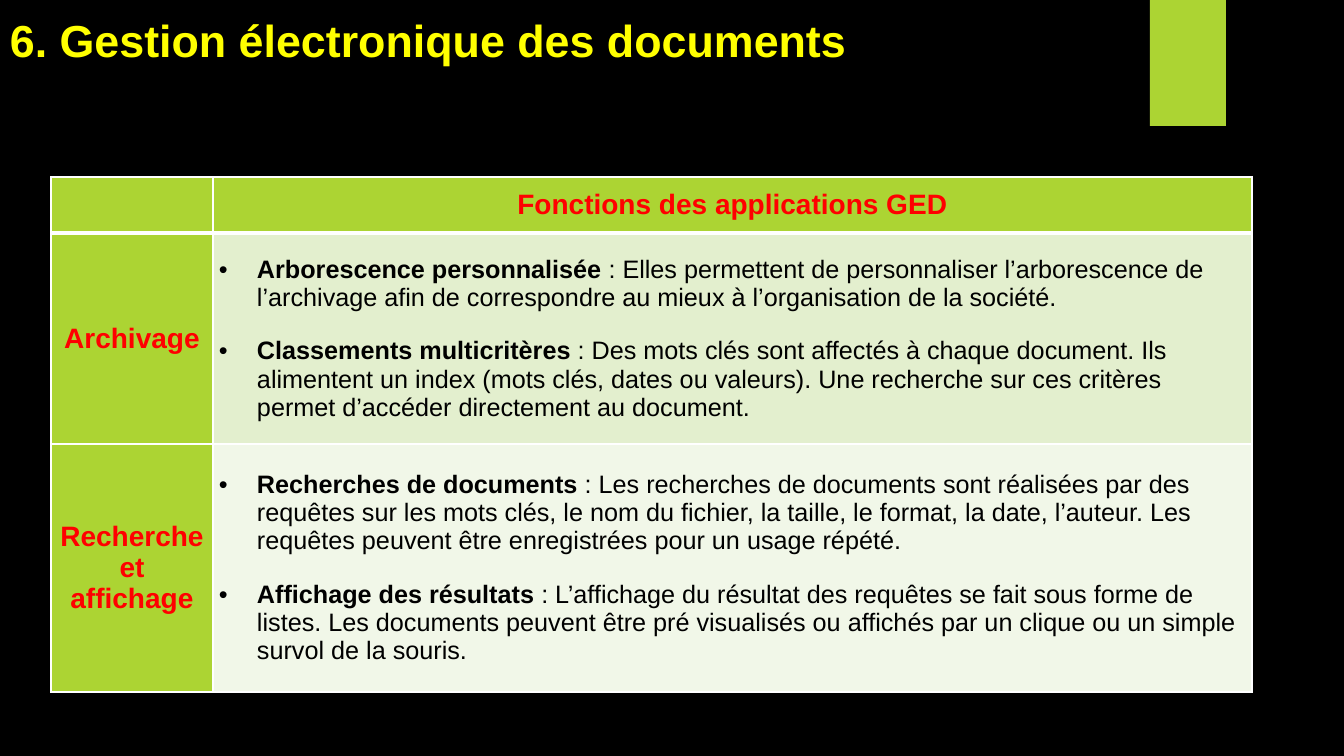
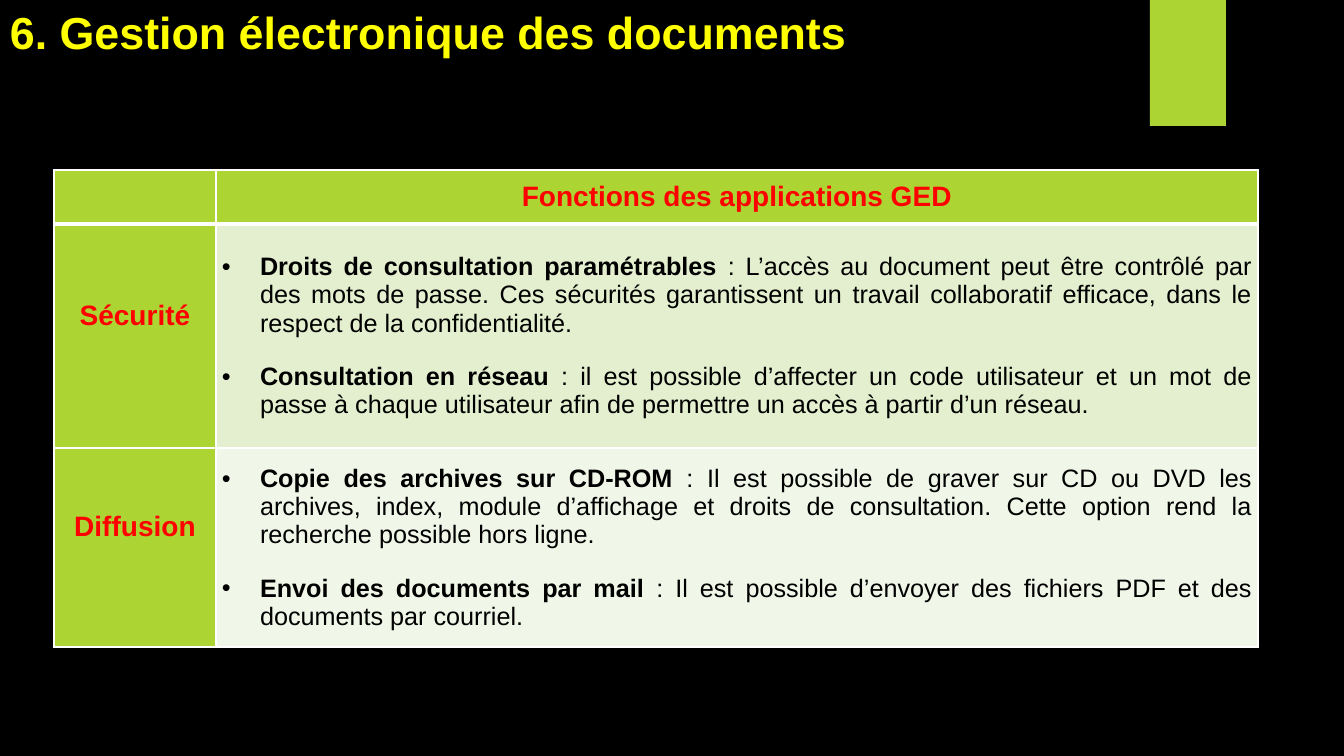
from pptx import Presentation
from pptx.dml.color import RGBColor
from pptx.enum.shapes import MSO_SHAPE
from pptx.enum.text import MSO_ANCHOR, PP_ALIGN
from pptx.oxml import parse_xml
from pptx.oxml.ns import nsdecls
from pptx.util import Pt

EMU_PER_PX = 914400 / 100.8
FONT = "Arial"
COLORS = {
    "background": "000000",
    "accent": "ACD433",
    "title": "FFFF00",
    "label": "FF0000",
    "body": "000000",
    "border": "FFFFFF",
    "first_band": "E3EFCE",
    "second_band": "F1F7E8",
}
TITLE = "6. Gestion électronique des documents"
TABLE_HEADING = "Fonctions des applications GED"
LABEL_WIDTH = 162

SLIDES = [
    {
        "title_top": 8,
        "table_corner": (51, 177),
        "text_width": 1039,
        "row_heights": (56, 211, 248),
        "align": PP_ALIGN.LEFT,
        "label_lift": 0,
        "rows": [
            ("Archivage", [
                ("Arborescence personnalisée",
                 " : Elles permettent de personnaliser l’arborescence de l’archivage "
                 "afin de correspondre au mieux à l’organisation de la société."),
                ("Classements multicritères",
                 " : Des mots clés sont affectés à chaque document. Ils alimentent un index "
                 "(mots clés, dates ou valeurs). Une recherche sur ces critères permet "
                 "d’accéder directement au document."),
            ]),
            ("Recherche et affichage", [
                ("Recherches de documents ",
                 ": Les recherches de documents sont réalisées par des requêtes sur les mots "
                 "clés, le nom du fichier, la taille, le format, la date, l’auteur. Les "
                 "requêtes peuvent être enregistrées pour un usage répété."),
                ("Affichage des résultats",
                 " : L’affichage du résultat des requêtes se fait sous forme de listes. Les "
                 "documents peuvent être pré visualisés ou affichés par un clique ou un "
                 "simple survol de la souris."),
            ]),
        ],
    },
    {
        "title_top": 0,
        "table_corner": (54, 170),
        "text_width": 1042,
        "row_heights": (54, 224, 199),
        "align": PP_ALIGN.JUSTIFY,
        "label_lift": 41,
        "rows": [
            ("Sécurité", [
                ("Droits de consultation paramétrables",
                 " : L’accès au document peut être contrôlé par des mots de passe. Ces "
                 "sécurités garantissent un travail collaboratif efficace, dans le respect "
                 "de la confidentialité."),
                ("Consultation en réseau",
                 " : il est possible d’affecter un code utilisateur et un mot de passe à "
                 "chaque utilisateur afin de permettre un accès à partir d’un réseau."),
            ]),
            ("Diffusion", [
                ("Copie des archives sur CD-ROM ",
                 ": Il est possible de graver sur CD ou DVD les archives, index, module "
                 "d’affichage et droits de consultation. Cette option rend la recherche "
                 "possible hors ligne."),
                ("Envoi des documents par mail ",
                 ": Il est possible d’envoyer des fichiers PDF et des documents par courriel."),
            ]),
        ],
    },
]


def px(length):
    return round(length * EMU_PER_PX)


def color(name):
    return RGBColor.from_string(COLORS[name])


class Deck:
    def __init__(self):
        self.presentation = Presentation()
        self.presentation.slide_width = px(1344)
        self.presentation.slide_height = px(756)
        self.slide = None

    def add_slide(self):
        self.slide = self.presentation.slides.add_slide(self.presentation.slide_layouts[6])
        background = self.slide.background.fill
        background.solid()
        background.fore_color.rgb = color("background")
        self.add_band()

    def add_band(self):
        band = self.slide.shapes.add_shape(
            MSO_SHAPE.RECTANGLE, px(1150), 0, px(76), px(126))
        band.shadow.inherit = False
        band.fill.solid()
        band.fill.fore_color.rgb = color("accent")
        band.line.fill.background()

    def format_run(self, run, size, color_name, bold=True):
        run.font.name = FONT
        run.font.size = Pt(size)
        run.font.bold = bold
        run.font.color.rgb = color(color_name)

    def add_title(self, text, top):
        box = self.slide.shapes.add_textbox(0, px(top), px(863), px(64))
        box.text_frame.word_wrap = True
        box.text_frame.text = text
        self.format_run(box.text_frame.paragraphs[0].runs[0], 32, "title")

    def style_cell(self, cell, fill_name, top=1, bottom=1, lift=0):
        cell.fill.solid()
        cell.fill.fore_color.rgb = color(fill_name)
        cell.vertical_anchor = MSO_ANCHOR.MIDDLE
        cell.margin_left = cell.margin_right = px(6)
        cell.margin_top = 0
        cell.margin_bottom = px(lift)
        properties = cell._tc.get_or_add_tcPr()
        widths = {"lnL": 1, "lnR": 1, "lnT": top, "lnB": bottom}
        for position, (side, width) in enumerate(widths.items()):
            properties.insert(position, parse_xml(
                f'<a:{side} {nsdecls("a")} w="{Pt(width)}"><a:solidFill>'
                f'<a:srgbClr val="{COLORS["border"]}"/></a:solidFill></a:{side}>'))

    def write_label(self, cell, text):
        cell.text_frame.text = text
        paragraph = cell.text_frame.paragraphs[0]
        paragraph.alignment = PP_ALIGN.CENTER
        self.format_run(paragraph.runs[0], 20, "label")

    def write_bullets(self, cell, items, align):
        text_frame = cell.text_frame
        for index, (lead, detail) in enumerate(items):
            paragraph = text_frame.add_paragraph() if index else text_frame.paragraphs[0]
            properties = paragraph._p.get_or_add_pPr()
            properties.set("marL", str(px(38)))
            properties.set("indent", str(px(-38)))
            properties.append(parse_xml(f'<a:buFont {nsdecls("a")} typeface="{FONT}"/>'))
            properties.append(parse_xml(f'<a:buChar {nsdecls("a")} char="•"/>'))
            paragraph.alignment = align
            if index:
                paragraph.space_before = Pt(18)
            for text, bold in ((lead, True), (detail, False)):
                run = paragraph.add_run()
                run.text = text
                self.format_run(run, 18, "body", bold)

    def add_function_table(self, content):
        left, top = content["table_corner"]
        widths = (LABEL_WIDTH, content["text_width"])
        heights = content["row_heights"]
        table = self.slide.shapes.add_table(
            len(heights), len(widths), px(left), px(top),
            px(sum(widths)), px(sum(heights))).table
        table.first_row = table.horz_banding = False
        for column, width in zip(table.columns, widths):
            column.width = px(width)
        for row, height in zip(table.rows, heights):
            row.height = px(height)
        for cell in table.rows[0].cells:
            self.style_cell(cell, "accent", bottom=3)
        self.write_label(table.cell(0, 1), TABLE_HEADING)
        bands = ("first_band", "second_band")
        for index, ((label, items), band) in enumerate(zip(content["rows"], bands), 1):
            label_cell, text_cell = table.rows[index].cells
            top_border = 3 if index == 1 else 1
            self.style_cell(label_cell, "accent", top=top_border, lift=content["label_lift"])
            self.write_label(label_cell, label)
            self.style_cell(text_cell, band, top=top_border)
            self.write_bullets(text_cell, items, content["align"])


def main():
    deck = Deck()
    for content in SLIDES:
        deck.add_slide()
        deck.add_title(TITLE, content["title_top"])
        deck.add_function_table(content)
    deck.presentation.save("out.pptx")


if __name__ == "__main__":
    main()
